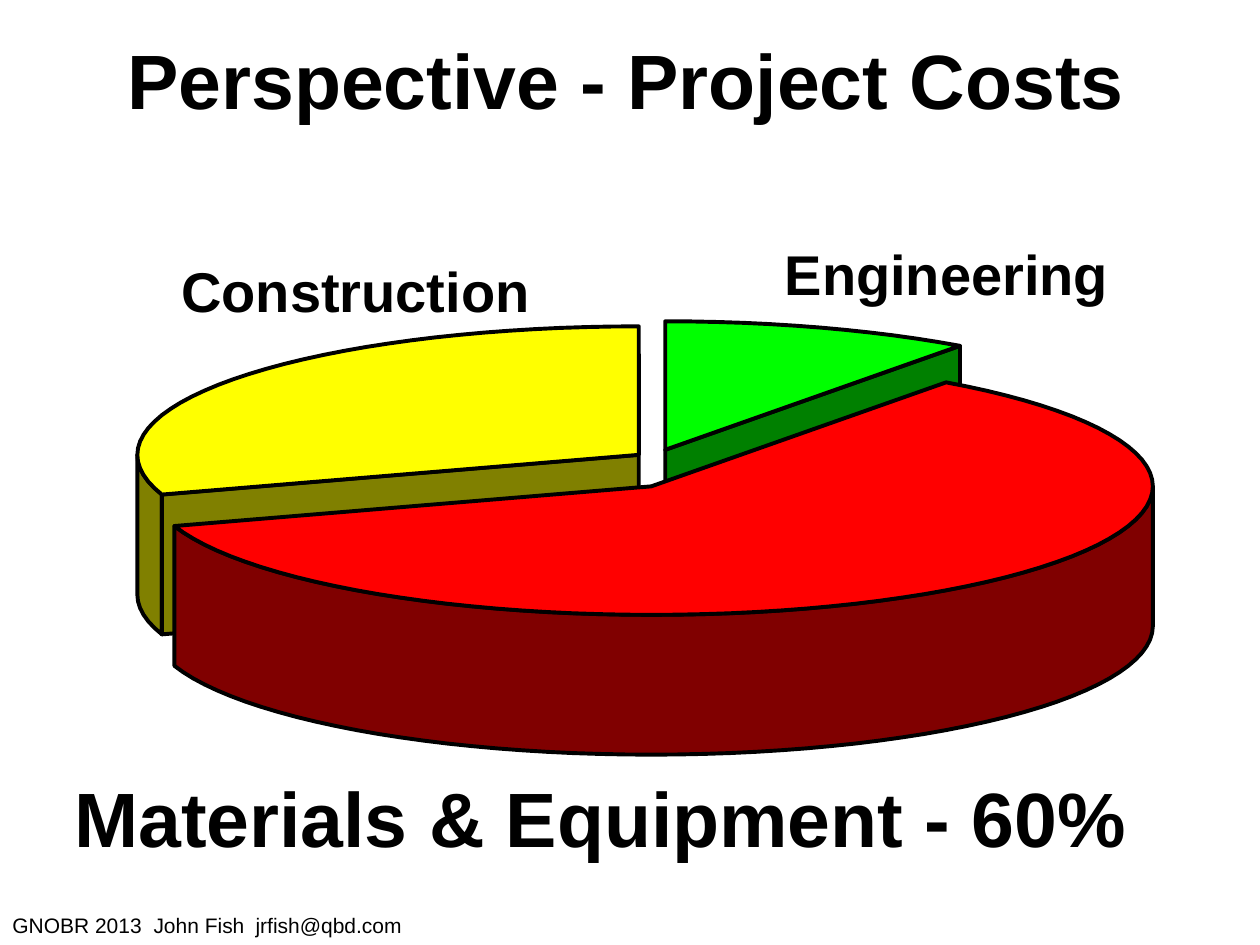
import math

from lxml import etree
from pptx import Presentation
from pptx.dml.color import RGBColor
from pptx.enum.text import MSO_ANCHOR, PP_ALIGN
from pptx.oxml.ns import qn
from pptx.util import Inches, Pt

CENTER, MIDDLE = PP_ALIGN.CENTER, MSO_ANCHOR.MIDDLE
TITLE_ONLY = 5

RADIUS_X, RADIUS_Y, DEPTH = 3.98, 1.02, 1.11
ARC_STEP = 3
DEGREES_PER_PERCENT = 3.6


def rgb(hex_color):
    return RGBColor.from_string(hex_color)


def rim_point(center, angle):
    """Point on the pie's edge, with the angle clockwise from the top."""
    turn = math.radians(angle)
    return (center[0] + RADIUS_X * math.sin(turn),
            center[1] - RADIUS_Y * math.cos(turn))


def arc(center, start, end):
    steps = max(1, round((end - start) / ARC_STEP))
    return [rim_point(center, start + (end - start) * i / steps)
            for i in range(steps + 1)]


def wall(top_edge):
    """Outline of the vertical face that hangs below an edge."""
    return top_edge + [(x, y + DEPTH) for x, y in reversed(top_edge)]


class PieSlide:
    font_name = "Arial"
    ink = "000000"
    outline_width = 2.25

    def __init__(self, prs):
        self.slide = prs.slides.add_slide(prs.slide_layouts[TITLE_ONLY])

    def style(self, paragraph, size, bold):
        font = paragraph.font
        font.name, font.size, font.bold = self.font_name, Pt(size), bold
        font.color.rgb = rgb(self.ink)

    def title(self, text, left, top, width, height, size):
        title = self.slide.shapes.title
        title.left, title.top = Inches(left), Inches(top)
        title.width, title.height = Inches(width), Inches(height)
        frame = title.text_frame
        frame.text = text
        frame.word_wrap = True
        frame.vertical_anchor = MIDDLE
        paragraph = frame.paragraphs[0]
        paragraph.alignment = CENTER
        self.style(paragraph, size, True)
        self.text_shadow(paragraph.runs[0])

    def text_shadow(self, run):
        effects = etree.SubElement(run.font._element, qn("a:effectLst"))
        shadow = etree.SubElement(effects, qn("a:outerShdw"),
                                  dist="38100", dir="2700000", algn="tl")
        etree.SubElement(shadow, qn("a:srgbClr"), val="808080")

    def label(self, text, left, top, width, height, size, bold=True, tabs=()):
        box = self.slide.shapes.add_textbox(
            Inches(left), Inches(top), Inches(width), Inches(height))
        frame = box.text_frame
        frame.word_wrap = True
        frame.text = text
        paragraph = frame.paragraphs[0]
        if tabs:
            tab_list = etree.SubElement(
                paragraph._p.get_or_add_pPr(), qn("a:tabLst"))
            for position in tabs:
                etree.SubElement(tab_list, qn("a:tab"),
                                 pos=str(Inches(position)), algn="l")
        self.style(paragraph, size, bold)

    def face(self, points, color):
        corners = [(Inches(x), Inches(y)) for x, y in points]
        builder = self.slide.shapes.build_freeform(*corners[0], scale=1.0)
        builder.add_line_segments(corners[1:], close=True)
        shape = builder.convert_to_shape()
        shape.shadow.inherit = False
        shape.fill.solid()
        shape.fill.fore_color.rgb = rgb(color)
        shape.line.color.rgb = rgb(self.ink)
        shape.line.width = Pt(self.outline_width)

    def slice(self, center, start, end, color, side_color, cut_angle=None):
        """Draw the visible walls of a slice, then its top."""
        front_start, front_end = max(start, 90), min(end, 270)
        if front_start < front_end:
            self.face(wall(arc(center, front_start, front_end)), side_color)
        if cut_angle is not None:
            self.face(wall([center, rim_point(center, cut_angle)]), side_color)
        self.face([center] + arc(center, start, end), color)


def main():
    prs = Presentation()
    prs.slide_width, prs.slide_height = Inches(10), Inches(7.5)
    page = PieSlide(prs)

    engineering_end = 10 * DEGREES_PER_PERCENT
    materials_end = engineering_end + 60 * DEGREES_PER_PERCENT

    page.title("Perspective - Project Costs", 0.72, 0, 8.5, 1.25, 44)
    page.slice((5.07, 3.61), materials_end, 360, "FFFF00", "808000",
               cut_angle=materials_end)
    page.label("Construction", 1.34, 1.99, 3.22, 0.88, 32)
    page.slice((5.28, 3.57), 0, engineering_end, "00FF00", "008000",
               cut_angle=engineering_end)
    page.label("Engineering", 6.13, 1.85, 3.18, 0.88, 32)
    page.slice((5.17, 3.86), engineering_end, materials_end,
               "FF0000", "800000")
    page.label("Materials & Equipment - 60%", 0.49, 6.07, 9.14, 0.84, 44)
    page.label("GNOBR 2013\tJohn Fish\tjrfish@qbd.com", 0, 7.19, 4.75, 0.3, 12,
               bold=False, tabs=(1.12, 1.93))

    prs.save("out.pptx")


if __name__ == "__main__":
    main()
